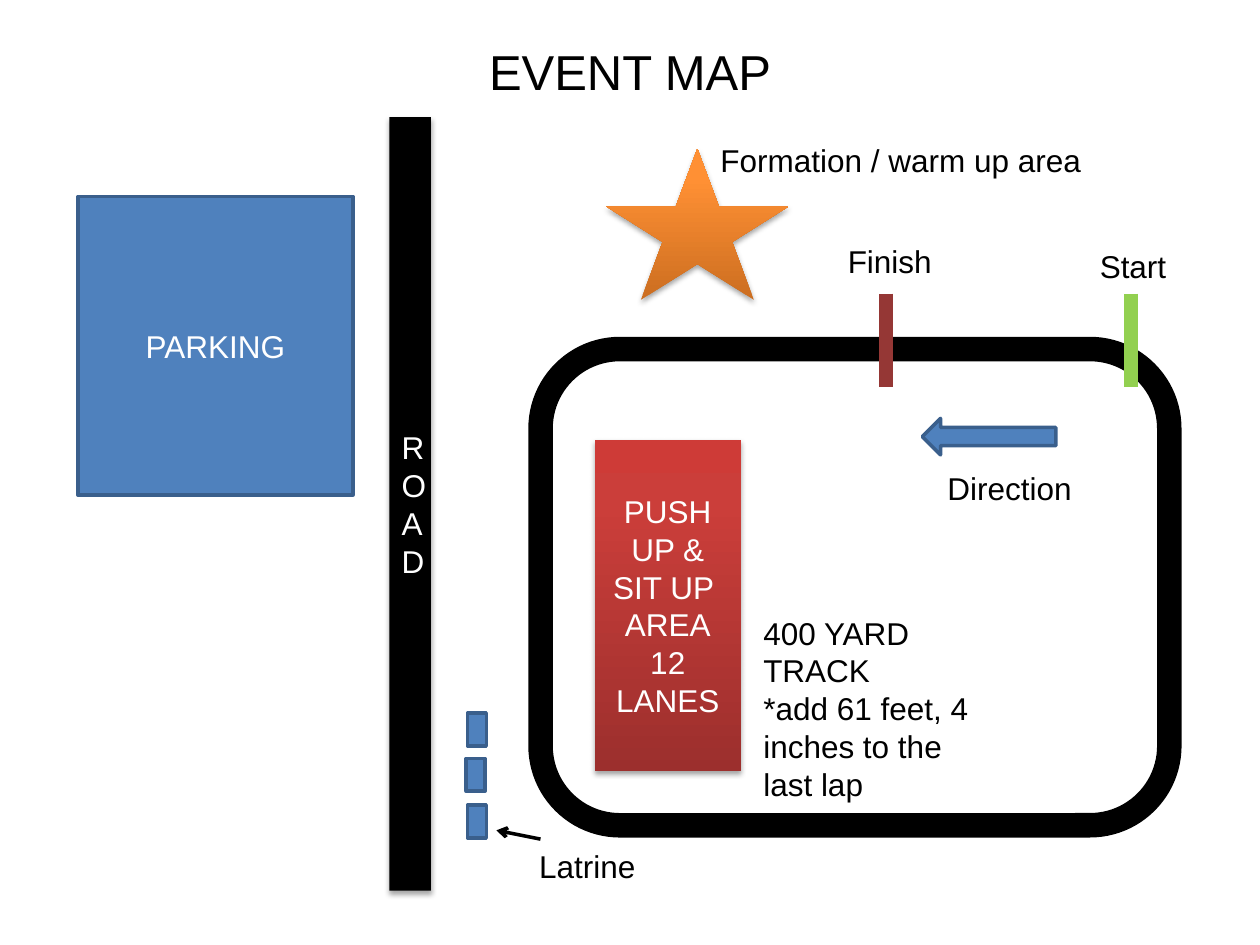
from copy import deepcopy

from lxml import etree
from pptx import Presentation
from pptx.dml.color import RGBColor
from pptx.enum.shapes import MSO_CONNECTOR as CONNECTOR, MSO_SHAPE as SHAPE
from pptx.enum.text import MSO_ANCHOR as ANCHOR, MSO_AUTO_SIZE as AUTO, PP_ALIGN as ALIGN
from pptx.oxml.ns import qn
from pptx.util import Inches, Pt

BLACK = RGBColor(0x00, 0x00, 0x00)
WHITE = RGBColor(0xFF, 0xFF, 0xFF)
BLUE = RGBColor(0x4F, 0x81, 0xBD)
NAVY = RGBColor(0x3A, 0x5F, 0x8C)
GREEN = RGBColor(0x92, 0xD0, 0x50)
MAROON = RGBColor(0x95, 0x37, 0x35)
ORANGES = RGBColor(0xCC, 0x6E, 0x20), RGBColor(0xFF, 0x90, 0x34), RGBColor(0xFF, 0x91, 0x36)
REDS = RGBColor(0x9C, 0x2F, 0x2D), RGBColor(0xCB, 0x3E, 0x3A), RGBColor(0xCE, 0x3B, 0x37)


def write(frame, lines, color=BLACK, align=ALIGN.LEFT, size=18):
    frame.word_wrap = True
    for index, line in enumerate(lines):
        para = frame.add_paragraph() if index else frame.paragraphs[0]
        para.alignment = align
        span = para.add_run()
        span.text = line
        span.font.name = "Arial"
        span.font.size = Pt(size)
        span.font.color.rgb = color


def add_block(kind, place, fill=None, line=None, width=2, lines=()):
    block = page.shapes.add_shape(kind, *map(Inches, place))
    block.shadow.inherit = False
    if fill is None:
        block.fill.background()
    else:
        block.fill.solid()
        block.fill.fore_color.rgb = fill
    if line is None:
        block.line.fill.background()
    else:
        block.line.color.rgb = line
        block.line.width = Pt(width)
    block.text_frame.vertical_anchor = ANCHOR.MIDDLE
    write(block.text_frame, lines, WHITE, ALIGN.CENTER)
    return block


deck = Presentation()
deck.slide_width, deck.slide_height = Inches(10), Inches(7.5)
page = deck.slides.add_slide(deck.slide_layouts[5])

# Title
title = page.shapes.title
title.left, title.top, title.width, title.height = map(Inches, (0, 0.28, 10, 0.57))
title.text_frame.auto_size = AUTO.NONE
write(title.text_frame, ["EVENT MAP"], align=ALIGN.CENTER, size=28)

# Areas of the map
add_block(SHAPE.ROUNDED_RECTANGLE, (4.29, 2.77, 4.99, 3.78), line=BLACK, width=14)
add_block(SHAPE.RECTANGLE, (0.62, 1.56, 2.18, 2.37), BLUE, NAVY, lines=["PARKING"])
road = add_block(SHAPE.RECTANGLE, (3.09, 0.93, 0.33, 6.14), BLACK, lines=["ROAD"])
star = add_block(SHAPE.STAR_5_POINT, (4.81, 1.18, 1.45, 1.2))
exercise = add_block(SHAPE.RECTANGLE, (4.72, 3.49, 1.16, 2.63),
                     lines=["PUSH UP & SIT UP ", "AREA", "12 LANES"])
add_block(SHAPE.LEFT_ARROW, (7.32, 3.32, 1.06, 0.29), BLUE, NAVY)

# Latrines
for left, top in ((3.71, 5.66), (3.7, 6.02), (3.71, 6.39)):
    add_block(SHAPE.RECTANGLE, (left, top, 0.15, 0.26), BLUE, NAVY)

# Gradients, dark at the bottom
for block, colors in ((star, ORANGES), (exercise, REDS)):
    block.fill.gradient()
    block.fill.gradient_angle = 90
    stop_list = block.fill._xPr.find(".//" + qn("a:gsLst"))
    stop_list.append(deepcopy(stop_list[-1]))
    for stop, position, color in zip(block.fill.gradient_stops, (0, 0.8, 1), colors):
        stop.position = position
        stop.color.rgb = color

# Soft shadows
for block in (road, star, exercise):
    effects = block._element.spPr.find(qn("a:effectLst"))
    shadow = etree.SubElement(effects, qn("a:outerShdw"), blurRad=str(Pt(3.1)),
                              dist=str(Pt(1.8)), dir="5400000", rotWithShape="0")
    tint = etree.SubElement(shadow, qn("a:srgbClr"), val=str(BLACK))
    etree.SubElement(tint, qn("a:alpha"), val="35000")

# Start and finish marks, latrine pointer
for ends, color, width in (
    ((8.98, 2.33, 8.98, 3.07), GREEN, 8),
    ((7.03, 2.33, 7.03, 3.07), MAROON, 8),
    ((4.29, 6.66, 3.94, 6.59), BLACK, 2),
):
    mark = page.shapes.add_connector(CONNECTOR.STRAIGHT, *map(Inches, ends))
    mark.line.color.rgb = color
    mark.line.width = Pt(width)
    etree.SubElement(mark._element.spPr, qn("a:effectLst"))
etree.SubElement(mark.line._get_or_add_ln(), qn("a:tailEnd"), type="arrow")

# Labels
for place, lines in (
    ((5.96, 4.82, 1.83, 1.62), ["400 YARD TRACK", "*add 61 feet, 4 inches to the last lap"]),
    ((8.63, 1.91, 0.88, 0.4), ["Start"]),
    ((6.63, 1.87, 0.88, 0.4), ["Finish"]),
    ((7.42, 3.67, 1.21, 0.4), ["Direction"]),
    ((5.62, 1.07, 3.27, 0.4), ["Formation / warm up area"]),
    ((4.18, 6.67, 1.73, 0.4), ["Latrine"]),
):
    label = page.shapes.add_textbox(*map(Inches, place))
    label.text_frame.auto_size = AUTO.SHAPE_TO_FIT_TEXT
    write(label.text_frame, lines)

deck.save("out.pptx")
